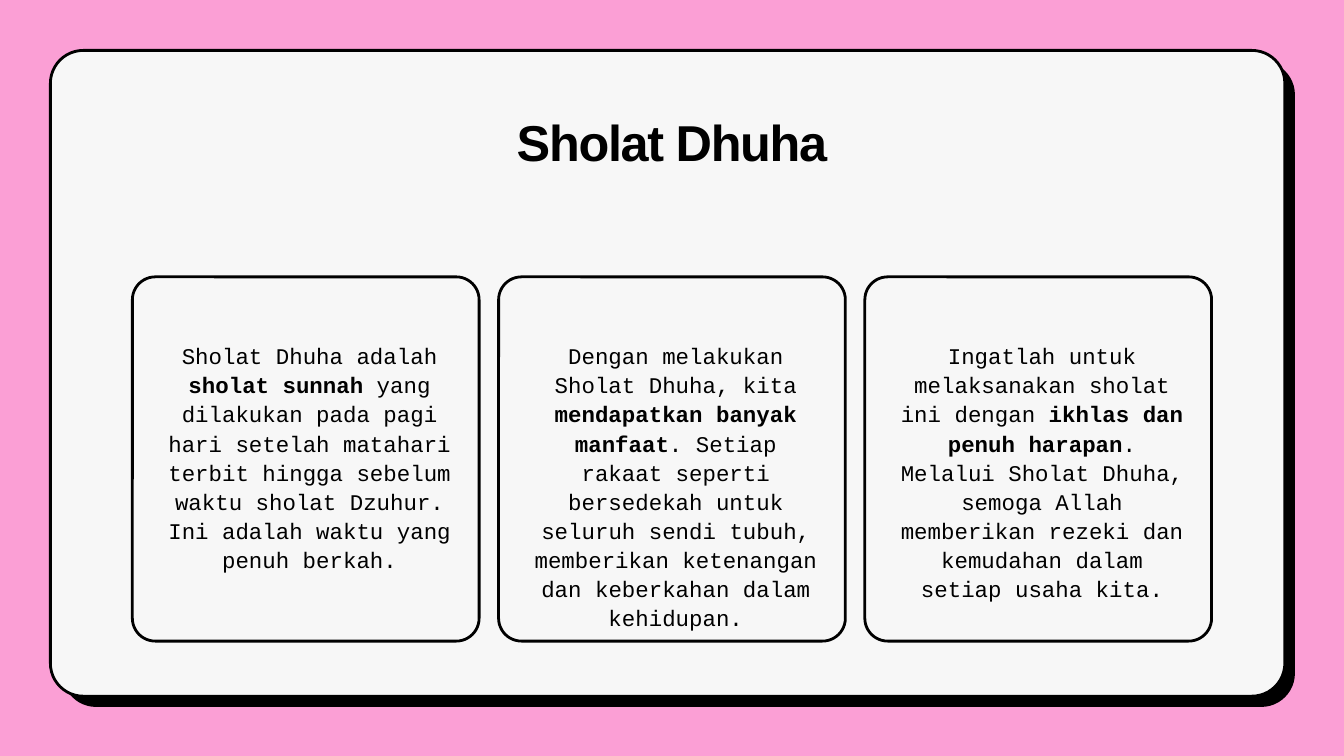
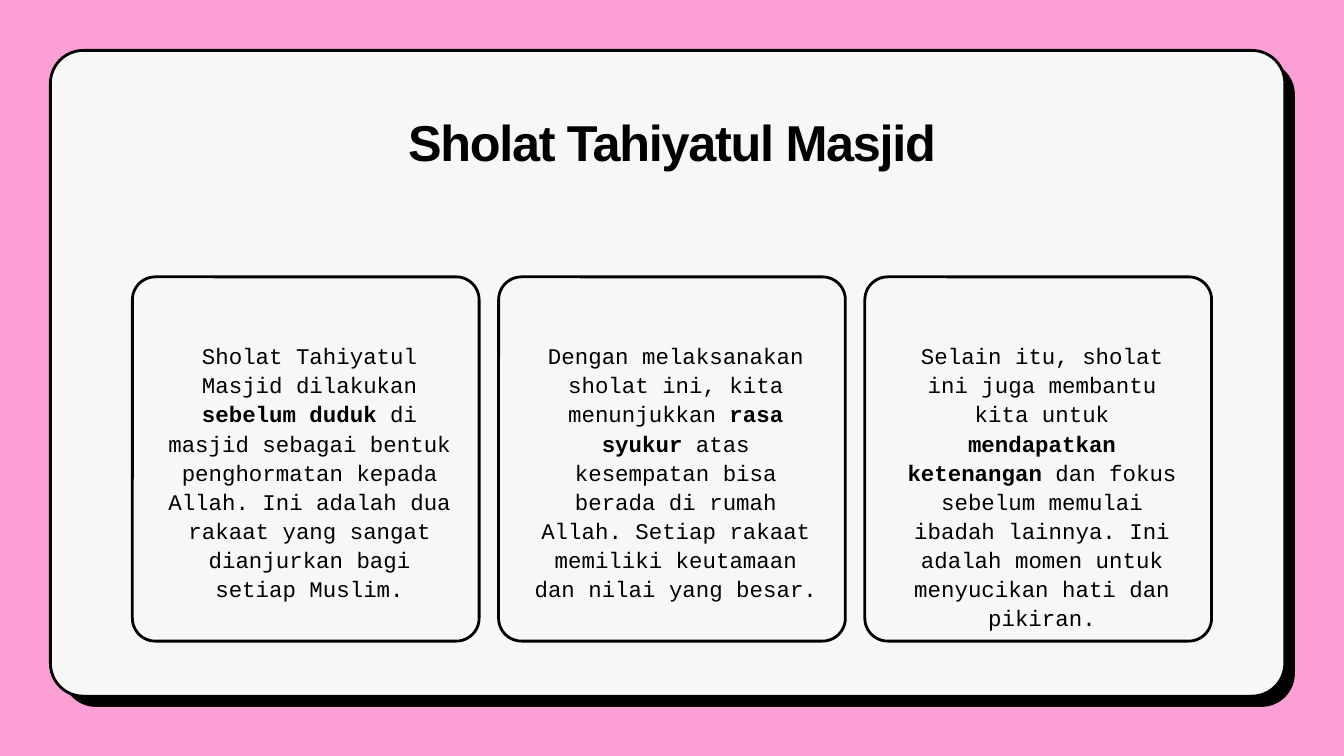
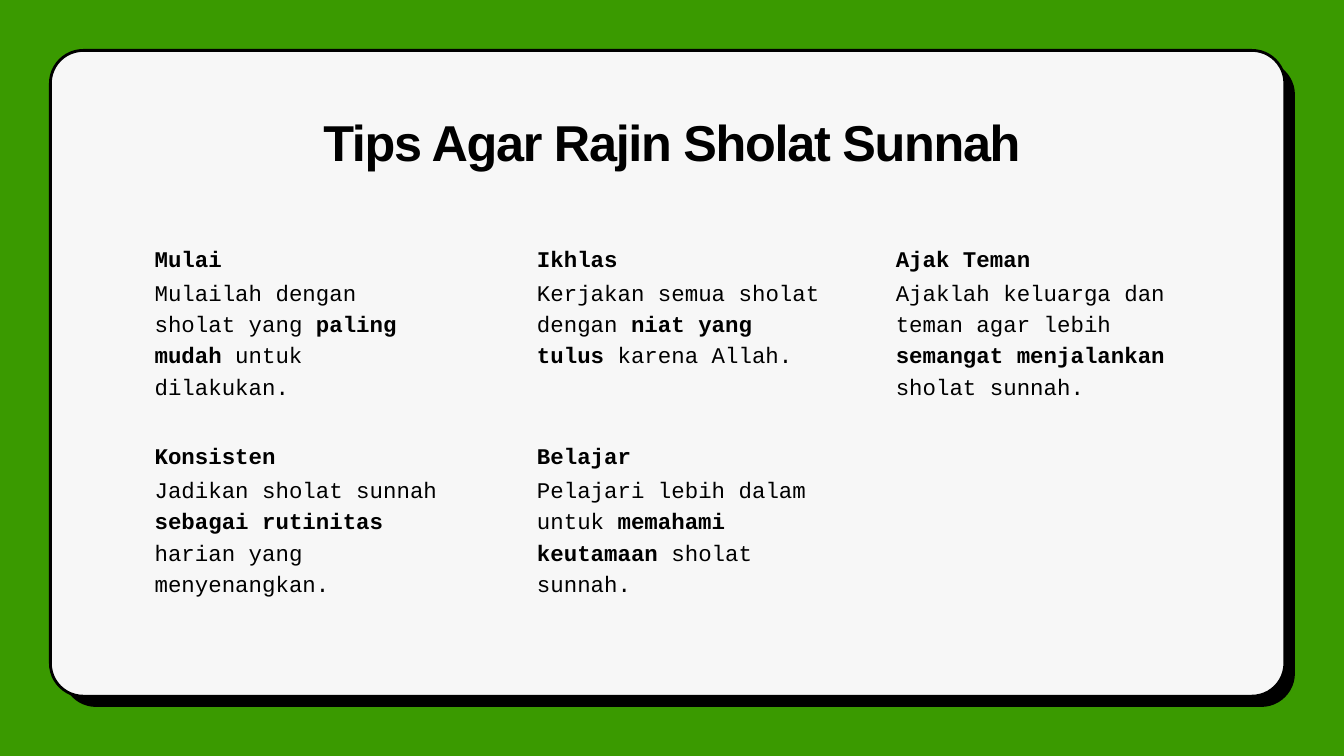
from pptx import Presentation
from pptx.dml.color import RGBColor
from pptx.enum.shapes import MSO_SHAPE as Shape
from pptx.enum.text import MSO_AUTO_SIZE as AutoSize, PP_ALIGN as Align
from pptx.util import Pt

PX = 9144  # EMU per px, 100 px to the inch
COLORS = {"pink": "FB9FD5", "green": "3A9A00", "paper": "F7F7F7", "ink": "000000"}
TITLE_FONT, BODY_FONT = "Arial", "Courier New"

PANEL = (75, 75, 1837, 961)
SHADOW = (93, 91, 1834, 961)
TITLE = (230, 165, 1540, 96)
CARD_LEFT, CARD_TOP, CARD_WIDTH, CARD_HEIGHT = 197, 412, 516, 542
CARD_PITCH = 545
TIP_COLUMNS = (230, 799, 1333)
TIP_TOP, TIP_PITCH, TIP_WIDTH = 361, 294, 439

# Text between ** marks is bold.
DHUHA = [
    "Sholat Dhuha adalah **sholat sunnah** yang dilakukan pada pagi hari setelah "
    "matahari terbit hingga sebelum waktu sholat Dzuhur. Ini adalah waktu yang "
    "penuh berkah.",
    "Dengan melakukan Sholat Dhuha, kita **mendapatkan banyak manfaat**. Setiap "
    "rakaat seperti bersedekah untuk seluruh sendi tubuh, memberikan ketenangan "
    "dan keberkahan dalam kehidupan.",
    "Ingatlah untuk melaksanakan sholat ini dengan **ikhlas dan penuh harapan**. "
    "Melalui Sholat Dhuha, semoga Allah memberikan rezeki dan kemudahan dalam "
    "setiap usaha kita.",
]
TAHIYATUL = [
    "Sholat Tahiyatul Masjid dilakukan **sebelum duduk** di masjid sebagai bentuk "
    "penghormatan kepada Allah. Ini adalah dua rakaat yang sangat dianjurkan bagi "
    "setiap Muslim.",
    "Dengan melaksanakan sholat ini, kita menunjukkan **rasa syukur** atas "
    "kesempatan bisa berada di rumah Allah. Setiap rakaat memiliki keutamaan dan "
    "nilai yang besar.",
    "Selain itu, sholat ini juga membantu kita untuk **mendapatkan ketenangan** dan "
    "fokus sebelum memulai ibadah lainnya. Ini adalah momen untuk menyucikan hati "
    "dan pikiran.",
]
TIPS = [
    ("Mulai", "Mulailah dengan sholat yang **paling mudah** untuk dilakukan."),
    ("Ikhlas", "Kerjakan semua sholat dengan **niat yang tulus** karena Allah."),
    ("Ajak Teman", "Ajaklah keluarga dan teman agar lebih **semangat menjalankan** "
                   "sholat sunnah."),
    ("Konsisten", "Jadikan sholat sunnah **sebagai rutinitas** harian yang menyenangkan."),
    ("Belajar", "Pelajari lebih dalam untuk **memahami keutamaan** sholat sunnah."),
]


def color(name):
    return RGBColor.from_string(COLORS[name])


def emu(box):
    return [length * PX for length in box]


def add_rounded(page, box, radius, fill=None):
    """Add a rounded box with an ink outline; it is hollow without a fill."""
    shape = page.shapes.add_shape(Shape.ROUNDED_RECTANGLE, *emu(box))
    shape.adjustments[0] = radius / min(box[2:])
    shape.shadow.inherit = False
    shape.line.color.rgb = color("ink")
    shape.line.width = Pt(3)
    if fill:
        shape.fill.solid()
        shape.fill.fore_color.rgb = color(fill)
    else:
        shape.fill.background()
    return shape


def add_text(page, box, text, leading, align=Align.LEFT, font=BODY_FONT, size=24, spacing=0):
    frame = page.shapes.add_textbox(*emu(box)).text_frame
    frame.word_wrap = True
    frame.auto_size = AutoSize.SHAPE_TO_FIT_TEXT
    frame.margin_left = frame.margin_top = frame.margin_right = frame.margin_bottom = 0
    para = frame.paragraphs[0]
    para.alignment = align
    para.line_spacing = Pt(leading)
    para.font.name = font
    para.font.size = Pt(size)
    para.font.color.rgb = color("ink")
    for index, part in enumerate(text.split("**")):
        if part:
            span = para.add_run()
            span.text = part
            span.font.bold = index % 2 == 1
            if spacing:
                span._r.get_or_add_rPr().set("spc", str(round(spacing * 100)))


def add_page(deck, background, title):
    page = deck.slides.add_slide(deck.slide_layouts[6])
    page.background.fill.solid()
    page.background.fill.fore_color.rgb = color(background)
    add_rounded(page, SHADOW, 50, "ink").line.fill.background()
    add_rounded(page, PANEL, 49, "paper")
    add_text(page, TITLE, f"**{title}**", 64.8, Align.CENTER, TITLE_FONT, 54, -1.4)
    return page


def add_card(page, box, text):
    left, top, width, height = box
    add_rounded(page, box, 34)
    add_text(page, (left + 44, top + 94, width - 77, 346), text, 31.2, Align.CENTER)


def add_tip(page, left, top, heading, text):
    add_text(page, (left, top, TIP_WIDTH, 46), f"**{heading}**", 31.2)
    add_text(page, (left, top + 47, TIP_WIDTH, 138), text, 33.6)


def add_card_page(deck, title, texts):
    page = add_page(deck, "pink", title)
    for index, text in enumerate(texts):
        left = CARD_LEFT + index * CARD_PITCH
        add_card(page, (left, CARD_TOP, CARD_WIDTH, CARD_HEIGHT), text)


def add_tip_page(deck, title, tips):
    page = add_page(deck, "green", title)
    for index, (heading, text) in enumerate(tips):
        row, column = divmod(index, len(TIP_COLUMNS))
        add_tip(page, TIP_COLUMNS[column], TIP_TOP + row * TIP_PITCH, heading, text)


def main():
    deck = Presentation()
    deck.slide_width, deck.slide_height = emu((2000, 1125))
    add_card_page(deck, "Sholat Dhuha", DHUHA)
    add_card_page(deck, "Sholat Tahiyatul Masjid", TAHIYATUL)
    add_tip_page(deck, "Tips Agar Rajin Sholat Sunnah", TIPS)
    deck.save("out.pptx")


if __name__ == "__main__":
    main()
